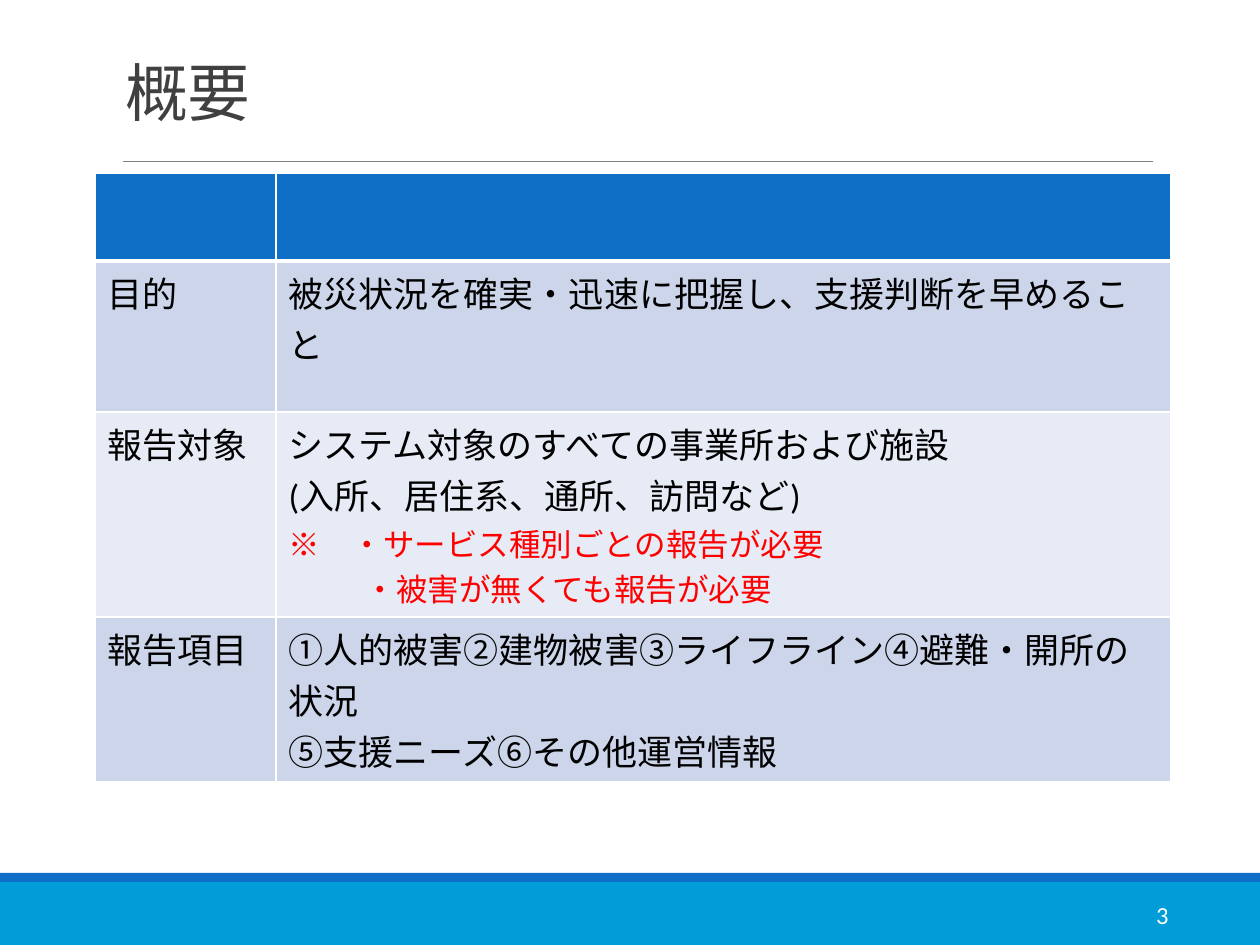
from lxml import etree
from pptx import Presentation
from pptx.dml.color import RGBColor
from pptx.enum.shapes import MSO_CONNECTOR, MSO_SHAPE
from pptx.enum.text import MSO_ANCHOR, PP_ALIGN
from pptx.oxml.ns import qn
from pptx.util import Pt

EMU_PER_PX = 914400 // 126
RECTANGLE = MSO_SHAPE.RECTANGLE
STRAIGHT = MSO_CONNECTOR.STRAIGHT
BOTTOM, MIDDLE = MSO_ANCHOR.BOTTOM, MSO_ANCHOR.MIDDLE
RIGHT = PP_ALIGN.RIGHT

WHITE = RGBColor(0xFF, 0xFF, 0xFF)
BLACK = RGBColor(0, 0, 0)
RED = RGBColor(0xFF, 0, 0)
DARK_GRAY = RGBColor(0x40, 0x40, 0x40)
GRAY = RGBColor(0x80, 0x80, 0x80)
BLUE = RGBColor(0x0F, 0x6F, 0xC6)
CYAN = RGBColor(0, 0x9D, 0xD9)
BAND_DARK = RGBColor(0xCC, 0xD5, 0xEA)
BAND_LIGHT = RGBColor(0xE7, 0xEB, 0xF5)

TITLE = {"size": Pt(36), "color": DARK_GRAY}
BODY = {"size": Pt(20), "color": BLACK}
NOTE = {"size": Pt(18), "color": RED}
PAGE = {"size": Pt(14), "color": WHITE}


def px(*values):
    return [value * EMU_PER_PX for value in values]


def write(paragraph, text, style):
    paragraph.text = text
    for run in paragraph.runs:
        run.font.name = "Calibri"
        run.font.size = style["size"]
        run.font.color.rgb = style["color"]


presentation = Presentation()
presentation.slide_width, presentation.slide_height = px(1260, 945)
slide = presentation.slides.add_slide(presentation.slide_layouts[6])

# Footer bands
for top, height, color in [(882, 63, CYAN), (873, 9, BLUE)]:
    band = slide.shapes.add_shape(RECTANGLE, *px(0, top, 1260, height))
    band.shadow.inherit = False
    band.fill.solid()
    band.fill.fore_color.rgb = color
    band.line.fill.background()

# Rule under the title
rule = slide.shapes.add_connector(STRAIGHT, *px(123, 161, 1153, 161))
rule.line.color.rgb = GRAY
rule.line.width = Pt(0.5)
etree.SubElement(rule._element.spPr, qn("a:effectLst"))

# Title and page number
labels = [
    ("概要", (113, 39, 1040, 97), TITLE, BOTTOM, {"line_spacing": 0.85}),
    ("3", (1045, 890, 136, 50), PAGE, MIDDLE, {"alignment": RIGHT}),
]
for text, box, style, anchor, layout in labels:
    frame = slide.shapes.add_textbox(*px(*box)).text_frame
    frame.word_wrap = True
    frame.vertical_anchor = anchor
    paragraph = frame.paragraphs[0]
    write(paragraph, text, style)
    for name, value in layout.items():
        setattr(paragraph, name, value)
    if style is TITLE:
        paragraph.runs[0].font._element.set("spc", "-40")

# Overview table: fill, label and body paragraphs (text, style, indent) per row
rows = [
    (88, BLUE, "", []),
    (151, BAND_DARK, "目的",
     [("被災状況を確実・迅速に把握し、支援判断を早めること", BODY, 0)]),
    (205, BAND_LIGHT, "報告対象",
     [("システム対象のすべての事業所および施設\v(入所、居住系、通所、訪問など)", BODY, 0),
      ("※\u3000・サービス種別ごとの報告が必要".replace("\u3000", "　"), NOTE, 0),
      ("・被害が無くても報告が必要", NOTE, 76)]),
    (165, BAND_DARK, "報告項目",
     [("➀人的被害②建物被害③ライフライン④避難・開所の状況", BODY, 0),
      ("⑤支援ニーズ⑥その他運営情報", BODY, 0)]),
]
total_height = sum(row[0] for row in rows)
table = slide.shapes.add_table(len(rows), 2, *px(95, 173, 1076, total_height)).table
table.columns[0].width, table.columns[1].width = px(181, 895)

for row_index, (height, color, label, body) in enumerate(rows):
    table.rows[row_index].height = height * EMU_PER_PX
    for column, content in enumerate([[(label, BODY, 0)] if label else [], body]):
        cell = table.cell(row_index, column)

        # Borders come before the fill; the one below the header is thicker
        properties = cell._tc.get_or_add_tcPr()
        for side in ("lnL", "lnR", "lnT", "lnB"):
            thick = (row_index, side) in [(0, "lnB"), (1, "lnT")]
            border = etree.SubElement(properties, qn(f"a:{side}"), w=str(Pt(3 if thick else 1)))
            fill = etree.SubElement(border, qn("a:solidFill"))
            etree.SubElement(fill, qn("a:srgbClr"), val=str(WHITE))
        cell.fill.solid()
        cell.fill.fore_color.rgb = color

        frame = cell.text_frame
        for index, (text, style, indent) in enumerate(content):
            paragraph = frame.add_paragraph() if index else frame.paragraphs[0]
            write(paragraph, text, style)
            if indent:
                paragraph._p.get_or_add_pPr().set("marL", str(indent * EMU_PER_PX))

presentation.save("out.pptx")
